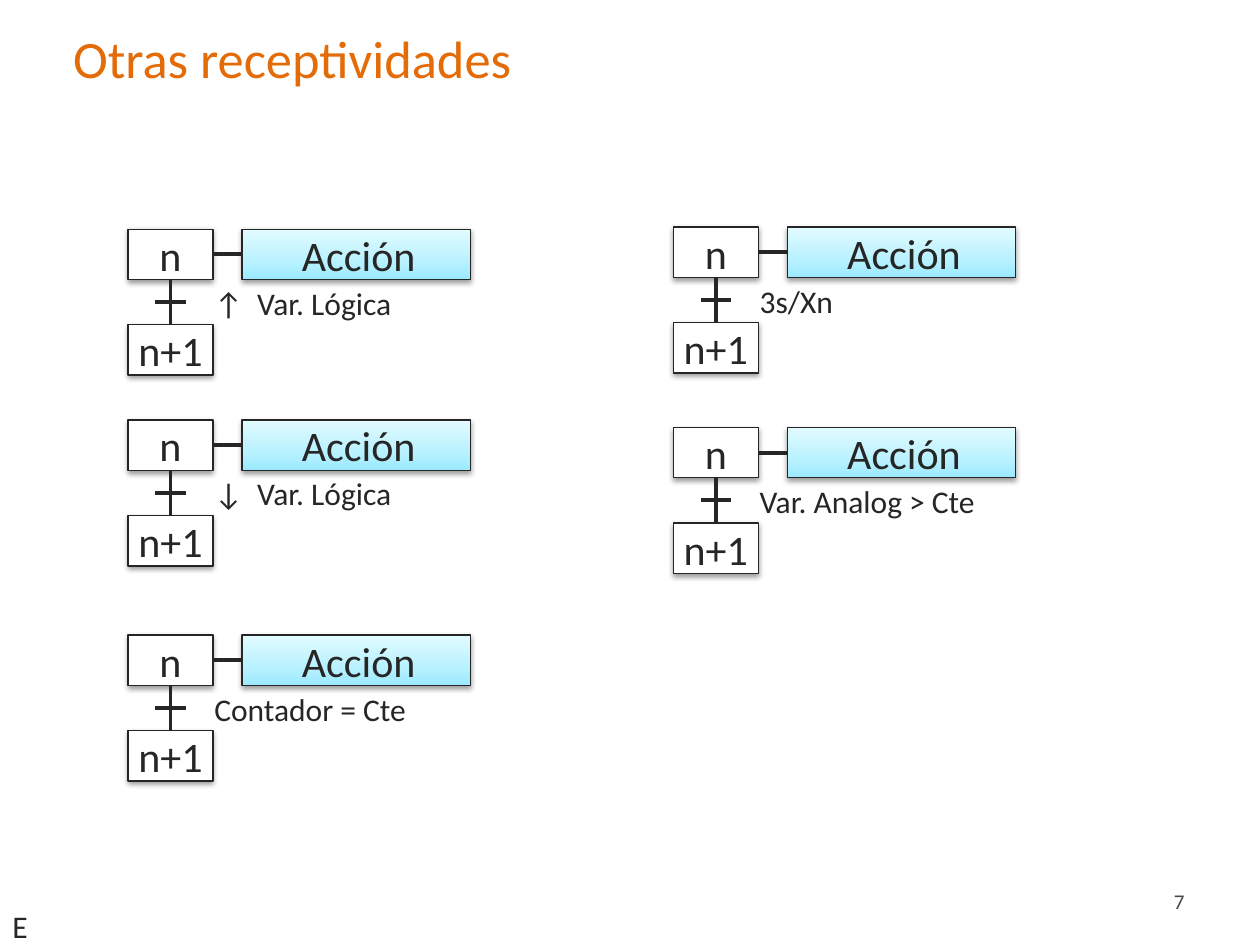
import copy
from dataclasses import dataclass

import pptx
import pptx.dml.color
import pptx.enum.shapes
import pptx.enum.text
import pptx.oxml
import pptx.oxml.ns
import pptx.util

Pt = pptx.util.Pt
RGB = pptx.dml.color.RGBColor.from_string
ALIGN = pptx.enum.text.PP_ALIGN
ANCHOR = pptx.enum.text.MSO_ANCHOR
AUTO_SIZE = pptx.enum.text.MSO_AUTO_SIZE
RECTANGLE = pptx.enum.shapes.MSO_SHAPE.RECTANGLE
STRAIGHT = pptx.enum.shapes.MSO_CONNECTOR.STRAIGHT
TOP, LEFT, BOTTOM, RIGHT = range(4)
NAMESPACE = pptx.oxml.ns.nsdecls("a")


@dataclass(frozen=True)
class Theme:
    font: str = "Calibri"
    heading: str = "E36C09"
    ink: str = "262626"
    step_edge: str = "252525"
    page: str = "464646"
    step: str = "FFFFFF"
    action: tuple = ((0, "9BE9FF"), (0.35, "B8F1FF"), (1, "E2FBFF"))
    shadow: str = "000000"
    heading_size: float = 30
    step_size: float = 24
    label_size: float = 18
    page_size: float = 12
    edge_width: float = 0.75
    link_width: float = 2.25


THEME = Theme()


def write(frame, text, size, color, align=ALIGN.LEFT, insets=(7.2, 7.2)):
    frame.margin_left, frame.margin_right = map(Pt, insets)
    frame.margin_top = frame.margin_bottom = Pt(3.6)
    paragraph = frame.paragraphs[0]
    paragraph.alignment = align
    run = paragraph.add_run()
    run.text = text
    run.font.name = THEME.font
    run.font.size = Pt(size)
    run.font.color.rgb = RGB(color)
    return paragraph


def add_label(shapes, text, left, top, width, height=28.8):
    label = shapes.add_textbox(Pt(left), Pt(top), Pt(width), Pt(height))
    label.text_frame.word_wrap = False
    label.text_frame.auto_size = AUTO_SIZE.SHAPE_TO_FIT_TEXT
    return write(label.text_frame, text, THEME.label_size, THEME.ink)


def add_tab_stop(paragraph, position):
    properties = paragraph._p.get_or_add_pPr()
    properties.append(pptx.oxml.parse_xml(
        f'<a:tabLst {NAMESPACE}><a:tab pos="{Pt(position)}" algn="l"/></a:tabLst>'))


def add_shadow(box):
    box.shadow.inherit = False
    effects = box._element.spPr.find(pptx.oxml.ns.qn("a:effectLst"))
    effects.append(pptx.oxml.parse_xml(
        f'<a:outerShdw {NAMESPACE} blurRad="{Pt(3.1)}" dist="{Pt(1.6)}" dir="5400000" '
        f'rotWithShape="0"><a:srgbClr val="{THEME.shadow}"><a:alpha val="38000"/>'
        '</a:srgbClr></a:outerShdw>'))


def add_box(shapes, text, left, top, width, edge, insets):
    box = shapes.add_shape(RECTANGLE, Pt(left), Pt(top), Pt(width), Pt(28.8))
    box.fill.solid()
    box.fill.fore_color.rgb = RGB(THEME.step)
    box.line.color.rgb = RGB(edge)
    box.line.width = Pt(THEME.edge_width)
    add_shadow(box)
    box.text_frame.vertical_anchor = ANCHOR.MIDDLE
    write(box.text_frame, text, THEME.step_size, THEME.ink, ALIGN.CENTER, insets)
    return box


def fill_action(action):
    action.fill.gradient()
    action.fill.gradient_angle = 90
    stop_list = action._element.spPr.find(".//" + pptx.oxml.ns.qn("a:gsLst"))
    stop_list.insert(1, copy.deepcopy(stop_list[0]))
    for stop, (position, color) in zip(action.fill.gradient_stops, THEME.action):
        stop.position = position
        stop.color.rgb = RGB(color)


def add_link(shapes, left, top, right, bottom):
    link = shapes.add_connector(STRAIGHT, Pt(left), Pt(top), Pt(right), Pt(bottom))
    link.line.color.rgb = RGB(THEME.ink)
    link.line.width = Pt(THEME.link_width)
    link._element.spPr.append(pptx.oxml.parse_xml(f"<a:effectLst {NAMESPACE}/>"))
    return link


def join_link(shapes, start, start_side, end, end_side):
    link = add_link(shapes, 0, 0, 0, 0)
    link.begin_connect(start, start_side)
    link.end_connect(end, end_side)


def add_transition(slide, left, top, condition, label_width):
    shapes = slide.shapes.add_group_shape().shapes
    step_width = 48.5
    axis = left + step_width / 2
    bar = top + 41.6
    step = add_box(shapes, "n", left, top, step_width, THEME.step_edge, (7.2, 7.2))
    action = add_box(shapes, "Acción", left + 65.2, top, 130.4, THEME.ink, (2.9, 0))
    fill_action(action)
    next_step = add_box(shapes, "n+1", left, top + 54.6, step_width,
                        THEME.step_edge, (2.9, 2.9))
    join_link(shapes, step, RIGHT, action, LEFT)
    join_link(shapes, step, BOTTOM, next_step, TOP)
    add_link(shapes, axis - 8.6, bar, axis + 8.6, bar)
    label = add_label(shapes, condition, left + 42.2, top + 27.6, label_width)
    if "\t" in condition:
        add_tab_stop(label, 24.5)


def add_heading(slide, left, top, width, height):
    heading = slide.shapes.title
    heading.left, heading.top = Pt(left), Pt(top)
    heading.width, heading.height = Pt(width), Pt(height)
    heading.text_frame.vertical_anchor = ANCHOR.MIDDLE
    write(heading.text_frame, "Otras receptividades", THEME.heading_size, THEME.heading)


def add_page_number(slide, left, top, width, height):
    page = slide.shapes.add_textbox(Pt(left), Pt(top), Pt(width), Pt(height))
    page.text_frame.word_wrap = True
    page.text_frame.vertical_anchor = ANCHOR.MIDDLE
    write(page.text_frame, "7", THEME.page_size, THEME.page, ALIGN.RIGHT)


def main():
    deck = pptx.Presentation()
    deck.slide_width, deck.slide_height = Pt(720), Pt(540)
    slide = deck.slides.add_slide(deck.slide_layouts[5])
    add_heading(slide, 34.6, 5.8, 661.7, 54)
    add_page_number(slide, 516, 500.4, 168, 28.8)
    transitions = {
        73.2: ((131, "↑\tVar. Lógica", 116.6),
               (240, "↓\tVar. Lógica", 116.6),
               (362.9, "Contador = Cte", 125.3)),
        384.8: ((129.8, "3s/Xn", 56.9),
                (244.3, "Var. Analog > Cte", 153.4)),
    }
    for left, column in transitions.items():
        for top, condition, label_width in column:
            add_transition(slide, left, top, condition, label_width)
    add_label(slide.shapes, "E", 0, 514.8, 23)
    deck.save("out.pptx")


if __name__ == "__main__":
    main()
